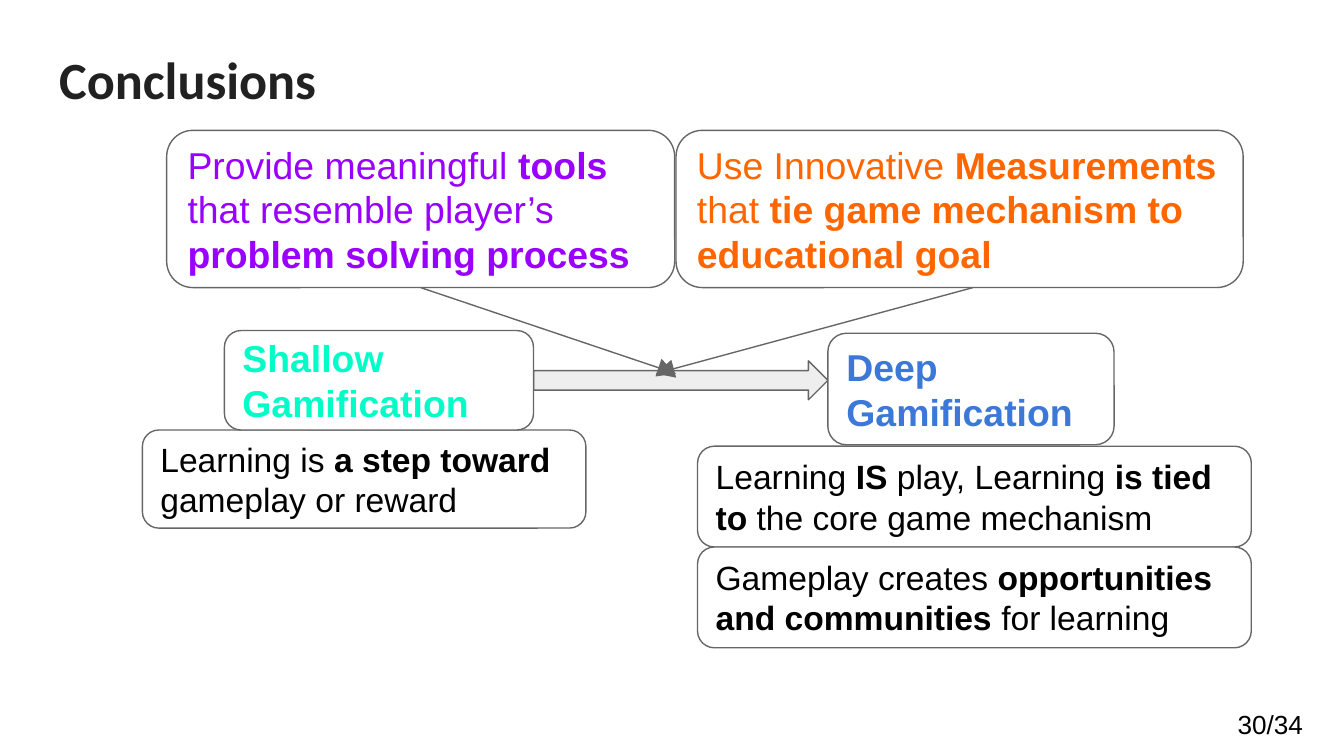
"""Build the conclusions slide: from shallow to deep gamification."""
from lxml import etree
from pptx import Presentation
from pptx import util as u
from pptx.dml.color import RGBColor
from pptx.enum import shapes, text
from pptx.oxml.ns import qn

WIDTH = 10
HEIGHT = WIDTH * 9 / 16
COLORS = {"title": "212121", "ink": "000000", "paper": "FFFFFF", "edge": "666666",
          "arrow": "EEEEEE", "tools": "9900FF", "measures": "FF6600",
          "shallow": "00FDC8", "deep": "3C78D8"}
TITLE = "Conclusions"
PAGE = "30/34"
ADVICE = [
    {"content": "Provide meaningful **tools **that resemble player’s **problem solving process**",
     "color": "tools", "left": 1.24, "width": 3.78, "pointer": (3.13, 5.03)},
    {"content": "Use Innovative **Measurements** that **tie game mechanism to educational goal**",
     "color": "measures", "left": 5.03, "width": 4.22, "pointer": (7.24, 4.88)},
]
ADVICE_TOP, ADVICE_HEIGHT = 0.97, 1.17
TARGET_Y, ARROW_HEIGHT = 2.78, 0.29
STAGES = [
    {"name": "**Shallow Gamification**", "color": "shallow", "box": (1.67, 2.46, 2.3, 0.74),
     "left": 1.06, "top": 3.2, "width": 3.3, "height": 0.73,
     "points": ["Learning is **a step toward **gameplay or reward"]},
    {"name": "**Deep Gamification**", "color": "deep", "box": (6.16, 2.48, 2.13, 0.83),
     "left": 5.19, "top": 3.32, "width": 4.12, "height": 0.75,
     "points": ["Learning **IS** play, Learning **is tied to** the core game mechanism",
                "Gameplay creates **opportunities and communities** for learning"]},
]


def rgb(name):
    return RGBColor.from_string(COLORS[name])


def inches(*values):
    return [u.Inches(v) for v in values]


def write(tf, content, size=18, color="ink", font="Arial", inset=0.1,
          anchor=text.MSO_ANCHOR.MIDDLE):
    tf.word_wrap = True
    tf.auto_size = text.MSO_AUTO_SIZE.NONE
    tf.vertical_anchor = anchor
    tf.margin_left = tf.margin_right = u.Inches(0.1)
    tf.margin_top = tf.margin_bottom = u.Inches(inset)
    p = tf.paragraphs[0]
    p.alignment = text.PP_ALIGN.LEFT
    for i, part in enumerate(content.split("**")):
        if part:
            r = p.add_run()
            r.text = part
            r.font.size = u.Pt(size)
            r.font.name = font
            r.font.bold = i % 2 == 1
            r.font.color.rgb = rgb(color)


def add_shape(s, kind, box, fill="paper"):
    sp = s.shapes.add_shape(kind, *inches(*box))
    sp.shadow.inherit = False
    sp.fill.solid()
    sp.fill.fore_color.rgb = rgb(fill)
    sp.line.color.rgb = rgb("edge")
    sp.line.width = u.Pt(0.75)
    return sp


def add_box(s, box, content, **style):
    sp = add_shape(s, shapes.MSO_SHAPE.ROUNDED_RECTANGLE, box)
    write(sp.text_frame, content, **style)


def add_pointer(s, start, end):
    line = s.shapes.add_connector(shapes.MSO_CONNECTOR.STRAIGHT, *inches(*start, *end))
    line.line.color.rgb = rgb("edge")
    line.line.width = u.Pt(0.75)
    etree.SubElement(line.get_or_add_ln(), qn("a:tailEnd"), type="triangle", w="lg", len="lg")
    etree.SubElement(line._element.spPr, qn("a:effectLst"))


def main():
    prs = Presentation()
    prs.slide_width, prs.slide_height = inches(WIDTH, HEIGHT)
    s = prs.slides.add_slide(prs.slide_layouts[5])

    title = s.shapes.title
    title.left, title.top, title.width, title.height = inches(0.34, 0.25, 9.32, 0.88)
    write(title.text_frame, f"**{TITLE}**", size=28, color="title", font="Calibri",
          anchor=text.MSO_ANCHOR.TOP)

    shallow, deep = (stage["box"] for stage in STAGES)
    start = shallow[0] + shallow[2]
    middle = shallow[1] + shallow[3] / 2
    add_shape(s, shapes.MSO_SHAPE.RIGHT_ARROW,
              (start, middle - ARROW_HEIGHT / 2, deep[0] - start, ARROW_HEIGHT), "arrow")

    for stage in STAGES:
        for i, point in enumerate(stage["points"]):
            add_box(s, (stage["left"], stage["top"] + i * stage["height"],
                        stage["width"], stage["height"]), point)
        add_box(s, stage["box"], stage["name"], size=20, color=stage["color"])

    for advice in ADVICE:
        add_box(s, (advice["left"], ADVICE_TOP, advice["width"], ADVICE_HEIGHT),
                advice["content"], size=20, color=advice["color"])
        start, end = advice["pointer"]
        add_pointer(s, (start, ADVICE_TOP + ADVICE_HEIGHT), (end, TARGET_Y))

    number = s.shapes.add_textbox(*inches(9.11, 5.22, 0.75, 0.34))
    write(number.text_frame, PAGE, size=14, inset=0.05, anchor=text.MSO_ANCHOR.TOP)
    prs.save("out.pptx")


if __name__ == "__main__":
    main()
